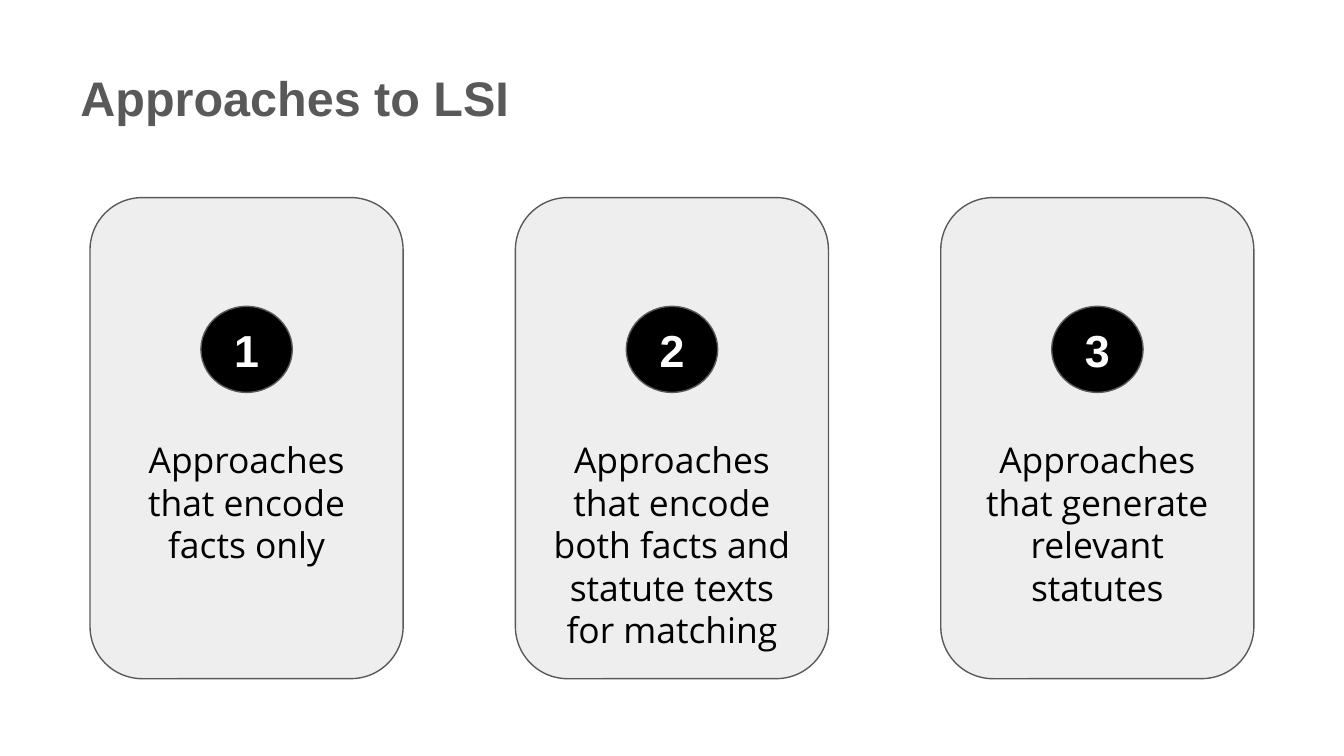
"""Build a slide that shows three numbered approaches to LSI as cards."""
from pptx import Presentation
from pptx import util as u
from pptx.dml.color import RGBColor
from pptx.enum import shapes, text

GREY = RGBColor(0x59, 0x59, 0x59)
PALE = RGBColor(0xEE, 0xEE, 0xEE)
BLACK = RGBColor(0, 0, 0)
WHITE = RGBColor(0xFF, 0xFF, 0xFF)

WIDTH = u.Inches(10)
HEIGHT = WIDTH * 9 // 16
MARGIN, CARD_TOP = u.Inches(0.67), u.Inches(1.47)
CARD_WIDTH, CARD_HEIGHT = u.Inches(2.33), u.Inches(3.58)
BADGE_TOP = u.Inches(2.28)
BADGE_WIDTH, BADGE_HEIGHT = u.Inches(0.68), u.Inches(0.64)
INSET = u.Inches(0.1)
CORNER = 0.167
CORNER_INSET = int(CARD_WIDTH * CORNER * 0.29)

APPROACHES = [
    "Approaches that encode facts only",
    "Approaches that encode both facts and statute texts for matching",
    "Approaches that generate relevant statutes",
]


def write(box, words, size, color, font="Arial", bold=False,
          align=text.PP_ALIGN.CENTER, anchor=text.MSO_ANCHOR.MIDDLE, top=INSET):
    frame = box.text_frame
    frame.word_wrap = True
    frame.vertical_anchor = anchor
    frame.margin_left = frame.margin_right = frame.margin_bottom = INSET
    frame.margin_top = top
    para = frame.paragraphs[0]
    para.alignment = align
    span = para.add_run()
    span.text = words
    span.font.name = font
    span.font.size = u.Pt(size)
    span.font.bold = bold
    span.font.color.rgb = color
    return para


def add_title(page, words):
    box = page.shapes.add_textbox(u.Inches(0.5), u.Inches(0.34),
                                  u.Inches(8.97), u.Inches(0.64))
    para = write(box, words, 26, GREY, bold=True, align=text.PP_ALIGN.LEFT,
                 anchor=text.MSO_ANCHOR.TOP)
    para.line_spacing = 1.15
    para.space_after = u.Pt(12)


def add_outlined(group, kind, left, top, width, height, fill):
    shape = group.shapes.add_shape(kind, left, top, width, height)
    shape.shadow.inherit = False
    shape.fill.solid()
    shape.fill.fore_color.rgb = fill
    shape.line.color.rgb = GREY
    shape.line.width = u.Pt(0.75)
    return shape


def add_card(page, left, number, words):
    group = page.shapes.add_group_shape()
    card = add_outlined(group, shapes.MSO_SHAPE.ROUNDED_RECTANGLE, left, CARD_TOP,
                        CARD_WIDTH, CARD_HEIGHT, PALE)
    card.adjustments[0] = CORNER
    write(card, words, 19, BLACK, font="Open Sans", anchor=text.MSO_ANCHOR.TOP,
          top=CARD_HEIGHT // 2 - CORNER_INSET)
    badge_left = left + (CARD_WIDTH - BADGE_WIDTH) // 2
    badge = add_outlined(group, shapes.MSO_SHAPE.OVAL, badge_left, BADGE_TOP,
                         BADGE_WIDTH, BADGE_HEIGHT, BLACK)
    write(badge, str(number), 24, WHITE, bold=True)


def main():
    deck = Presentation()
    deck.slide_width, deck.slide_height = WIDTH, HEIGHT
    page = deck.slides.add_slide(deck.slide_layouts[6])
    add_title(page, "Approaches to LSI")
    pitch = (WIDTH - 2 * MARGIN - CARD_WIDTH) // (len(APPROACHES) - 1)
    for index, words in enumerate(APPROACHES):
        add_card(page, MARGIN + index * pitch, index + 1, words)
    deck.save("out.pptx")


if __name__ == "__main__":
    main()
